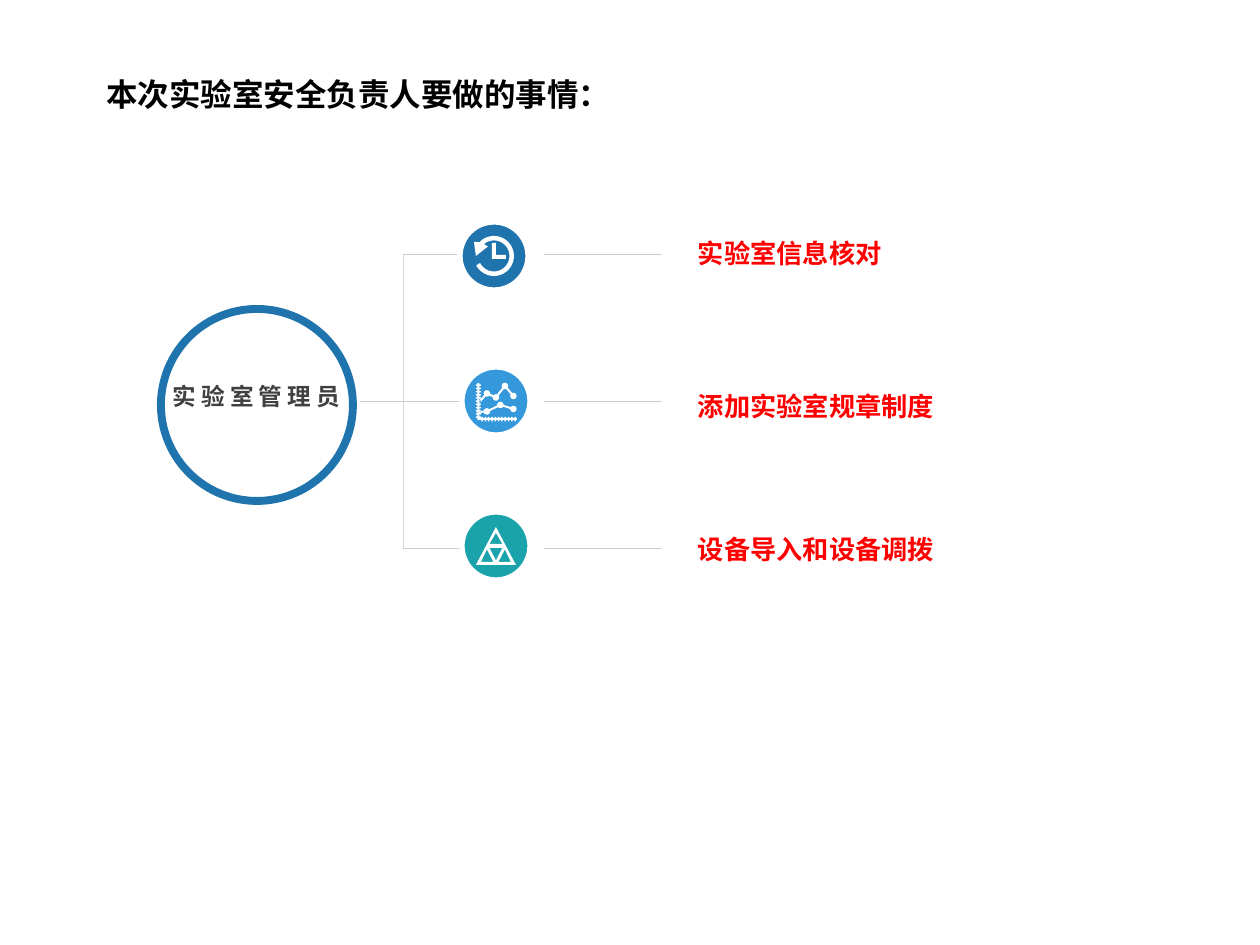
import math

import pptx
import pptx.dml.color
import pptx.enum.shapes
import pptx.enum.text
import pptx.oxml.ns
import pptx.util
from lxml import etree

PX = 914400 // 126
COLORS = {
    "white": "FFFFFF", "black": "000000", "red": "FF0000", "gray_text": "404040",
    "branch": "CCCCCC", "trunk": "D9D9D9",
    "blue": "1F74AD", "sky": "3498DB", "teal": "1AA3AA",
}
CJK = "Noto Sans CJK SC"
ANCHOR = pptx.enum.text.MSO_ANCHOR
ALIGN = pptx.enum.text.PP_ALIGN

HEADING = "本次实验室安全负责人要做的事情："
ROLE = "实验室管理员"
# text, font, label top, icon name, icon centre, icon colour
TASKS = [
    ("实验室信息核对", "Arial", 209, "clock", (494, 256), "blue"),
    ("添加实验室规章制度", CJK, 362, "chart", (496, 401), "sky"),
    ("设备导入和设备调拨", "Arial", 505, "pyramid", (496, 546), "teal"),
]
BRANCH_TOP, BRANCH_STEP = 254, 147
TRUNK_X = 403

# Icon outlines, as offsets from the icon centre
PYRAMID = [
    [(0, -19), (-20, 19), (20, 19)],
    [(0, -13), (6.5, -2), (-6.5, -2)],
    [(-15, 16), (-9, 3.5), (-2.5, 16)],
    [(-6.5, 2), (6.5, 2), (0, 14.5)],
    [(9, 3.5), (15, 16), (2.5, 16)],
]
CLOCK_HANDS = [(-2, -13), (2, -13), (2, -1), (12, -1), (12, 3), (-2, 3)]
ARROWHEAD = [(-6, -9.5), (-18, 0), (-20, -14)]
# Axis point where the line starts, then its dots
TRENDS = [
    [(-16.5, 1), (-9, -7.5), (0, -3.5), (9, -15), (17.5, -5)],
    [(-16.5, 11), (-9, 10.5), (4.5, 4), (17.5, 8)],
]


def px(value):
    return round(value * PX)


def rgb(name):
    return pptx.dml.color.RGBColor.from_string(COLORS[name])


def arc(radius, start, end, steps=48):
    angles = [math.radians(start + (end - start) * i / steps) for i in range(steps + 1)]
    return [(radius * math.cos(a), radius * math.sin(a)) for a in angles]


def box(left, top, right, bottom):
    return [(left, top), (right, top), (right, bottom), (left, bottom)]


def trend_segment(start, end, start_gap, end_gap, half_width=1):
    """Thin bar between two points, cut back so that it only touches the dots."""
    length = math.dist(start, end)
    ux, uy = (end[0] - start[0]) / length, (end[1] - start[1]) / length
    nx, ny = -uy * half_width, ux * half_width
    x1, y1 = start[0] + ux * start_gap, start[1] + uy * start_gap
    x2, y2 = end[0] - ux * end_gap, end[1] - uy * end_gap
    return [(x1 + nx, y1 + ny), (x2 + nx, y2 + ny), (x2 - nx, y2 - ny), (x1 - nx, y1 - ny)]


def clock_outlines():
    ring = arc(20, 224, 512) + arc(15.5, 513, 230) + ARROWHEAD
    return [ring, CLOCK_HANDS]


def chart_outlines(dot_radius=3.2):
    outlines = [box(-18.5, -18, -16.5, 19), box(-16.5, 17, 21, 19)]
    for i in range(11):
        y, x = -16.5 + 3.2 * i, -14.5 + 3.3 * i
        outlines += [box(-20, y, -18.5, y + 1.5), box(-16.5, y, -15, y + 1.5),
                     box(x, 16, x + 1.5, 17), box(x, 19, x + 1.5, 20.5)]
    for points in TRENDS:
        for i, (start, end) in enumerate(zip(points, points[1:])):
            outlines.append(trend_segment(start, end, 3 if i else 0, 3))
            outlines.append([(end[0] + dx, end[1] + dy) for dx, dy in arc(dot_radius, 0, 345, 23)])
    return outlines


def write(shape, text, *, size, color, font="Arial", align=ALIGN.LEFT, anchor=ANCHOR.TOP,
          spacing=None, tracking=None, insets=(13, 6, 13, 6), wrap=True):
    frame = shape.text_frame
    frame.word_wrap = wrap
    frame.auto_size = pptx.enum.text.MSO_AUTO_SIZE.NONE
    frame.vertical_anchor = anchor
    frame.margin_left, frame.margin_top, frame.margin_right, frame.margin_bottom = map(px, insets)
    paragraph = frame.paragraphs[0]
    paragraph.alignment = align
    if spacing:
        paragraph.line_spacing = spacing
    run = paragraph.add_run()
    run.text = text
    run.font.size = pptx.util.Pt(size)
    run.font.bold = True
    run.font.color.rgb = rgb(color)
    run.font.name = font
    properties = run.font._element
    etree.SubElement(properties, pptx.oxml.ns.qn("a:ea"), typeface=CJK)
    if tracking:
        properties.set("spc", str(tracking * 100))


def add_line(shapes, x1, y1, x2, y2, color="branch"):
    line = shapes.add_connector(pptx.enum.shapes.MSO_CONNECTOR.STRAIGHT, *map(px, (x1, y1, x2, y2)))
    line.line.color.rgb = rgb(color)
    line.line.width = pptx.util.Pt(0.5)
    etree.SubElement(line._element.spPr, pptx.oxml.ns.qn("a:effectLst"))


def add_circle(shapes, left, top, size, fill, line, width):
    circle = shapes.add_shape(pptx.enum.shapes.MSO_SHAPE.OVAL, *map(px, (left, top, size, size)))
    circle.shadow.inherit = False
    circle.fill.solid()
    circle.fill.fore_color.rgb = rgb(fill)
    circle.line.color.rgb = rgb(line)
    circle.line.width = pptx.util.Pt(width)


def add_icon(shapes, outlines, center):
    placed = [[(px(center[0] + x), px(center[1] + y)) for x, y in outline] for outline in outlines]
    builder = shapes.build_freeform(*placed[0][0], scale=1.0)
    for i, outline in enumerate(placed):
        if i:
            builder.move_to(*outline[0])
        builder.add_line_segments(outline[1:], close=True)
    icon = builder.convert_to_shape()
    icon.shadow.inherit = False
    icon.fill.solid()
    icon.fill.fore_color.rgb = rgb("white")
    icon.line.fill.background()


def main():
    deck = pptx.Presentation()
    deck.slide_width, deck.slide_height = pptx.util.Inches(10), pptx.util.Inches(7.5)
    slide = deck.slides.add_slide(deck.slide_layouts[5])
    shapes = slide.shapes

    title = shapes.title
    title.left, title.top, title.width, title.height = map(px, (93, 69, 532, 50))
    write(title, HEADING, size=18, color="black", wrap=False)

    branches = [BRANCH_TOP + BRANCH_STEP * i for i in range(len(TASKS))]
    add_line(shapes, 360, branches[1], TRUNK_X, branches[1])
    add_line(shapes, TRUNK_X, branches[0], TRUNK_X, branches[-1], "trunk")
    add_circle(shapes, 161, 309, 192, "white", "blue", 4.5)
    role = shapes.add_textbox(*map(px, (137, 370, 239, 68)))
    write(role, ROLE, size=13.5, color="gray_text", font=CJK, align=ALIGN.CENTER,
          spacing=1.2, tracking=3)

    icons = {"clock": clock_outlines(), "chart": chart_outlines(), "pyramid": PYRAMID}
    for y, (text, font, top, icon, center, color) in zip(branches, TASKS):
        add_line(shapes, TRUNK_X, y, 500, y)
        add_circle(shapes, center[0] - 34, center[1] - 34, 68, color, "white", 3)
        add_icon(shapes, icons[icon], center)
        add_line(shapes, 544, y, 662, y)
        label = shapes.add_textbox(*map(px, (689, top, 391, 60)))
        write(label, text, size=15, color="red", font=font, anchor=ANCHOR.BOTTOM,
              spacing=1.2, insets=(9, 5, 9, 0))

    deck.save("out.pptx")


if __name__ == "__main__":
    main()
